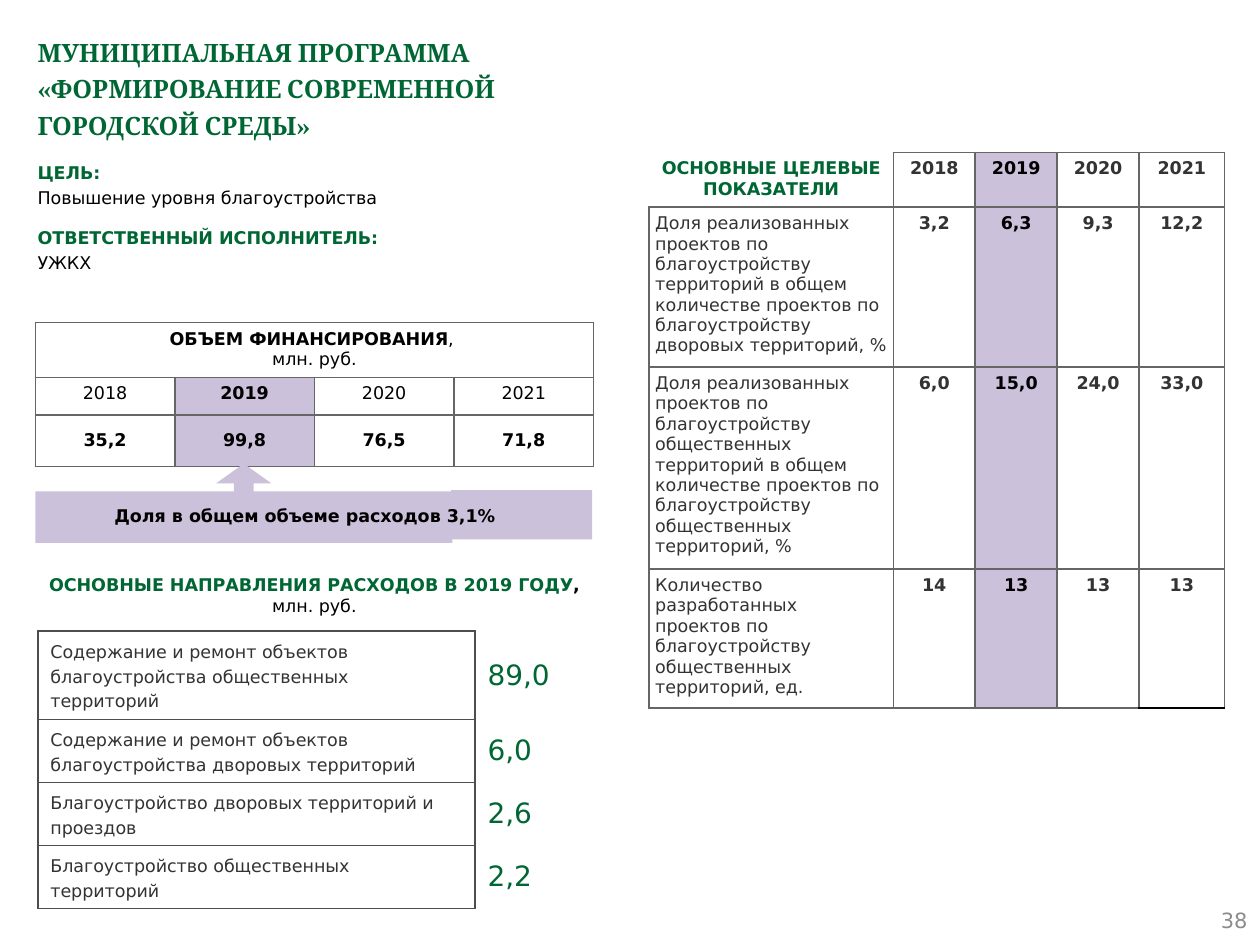
from dataclasses import dataclass

from lxml.etree import SubElement
from pptx import Presentation
from pptx.dml.color import RGBColor
from pptx.enum.shapes import MSO_SHAPE
from pptx.enum.text import MSO_ANCHOR, PP_ALIGN
from pptx.oxml.ns import qn
from pptx.util import Inches, Pt


@dataclass(frozen=True)
class Theme:
    green: str = "006633"
    black: str = "000000"
    dark: str = "333333"
    grid: str = "666666"
    frame: str = "4D4D4D"
    lilac: str = "CCC1DA"
    grey: str = "8C8C8C"
    heading_font: str = "Cambria"
    body_font: str = "DejaVu Sans"
    title: float = 14.4
    body: float = 10
    number: float = 12
    amount: float = 16


THEME = Theme()

TITLE = "МУНИЦИПАЛЬНАЯ ПРОГРАММА \v«ФОРМИРОВАНИЕ СОВРЕМЕННОЙ\vГОРОДСКОЙ СРЕДЫ»"
PASSPORT = [
    ("ЦЕЛЬ:", "Повышение уровня благоустройства"),
    ("ОТВЕТСТВЕННЫЙ ИСПОЛНИТЕЛЬ:", "УЖКХ"),
]
YEARS = ["2018", "2019", "2020", "2021"]
CURRENT = YEARS.index("2019")
FUNDING_TITLE = "ОБЪЕМ ФИНАНСИРОВАНИЯ"
UNIT = "млн. руб."
FUNDING = ["35,2", "99,8", "76,5", "71,8"]
SHARE = "Доля в общем объеме расходов 3,1%"
DIRECTIONS_TITLE = "ОСНОВНЫЕ НАПРАВЛЕНИЯ РАСХОДОВ В 2019 ГОДУ"
DIRECTIONS = [
    ("Содержание и ремонт объектов благоустройства общественных территорий", "89,0"),
    ("Содержание и ремонт объектов благоустройства дворовых территорий", "6,0"),
    ("Благоустройство дворовых территорий и проездов", "2,6"),
    ("Благоустройство общественных территорий", "2,2"),
]
INDICATORS_TITLE = "ОСНОВНЫЕ ЦЕЛЕВЫЕ ПОКАЗАТЕЛИ"
INDICATORS = [
    ("Доля реализованных проектов по благоустройству территорий в общем количестве "
     "проектов по благоустройству дворовых территорий, %",
     ["3,2", "6,3", "9,3", "12,2"]),
    ("Доля реализованных проектов по благоустройству общественных территорий в общем "
     "количестве проектов по благоустройству общественных территорий, %",
     ["6,0", "15,0", "24,0", "33,0"]),
    ("Количество разработанных проектов по благоустройству общественных территорий, ед.",
     ["14", "13", "13", "13"]),
]
PAGE_NUMBER = "38"


def write(paragraph, text, size=THEME.body, color=THEME.black, bold=False,
          font=THEME.body_font, align=PP_ALIGN.LEFT, spacing=None, before=None):
    """Append formatted text to the paragraph; \\v breaks the line."""
    paragraph.alignment = align
    if spacing:
        paragraph.line_spacing = spacing
    if before:
        paragraph.space_before = Pt(before)
    for index, line in enumerate(text.split("\v")):
        if index:
            paragraph.add_line_break()
        span = paragraph.add_run()
        span.text = line
        span.font.name = font
        span.font.size = Pt(size)
        span.font.bold = bold
        span.font.color.rgb = RGBColor.from_string(color)


def add_text(page, left, top, width, height, wrap=True, anchor=MSO_ANCHOR.TOP):
    frame = page.shapes.add_textbox(*map(Inches, (left, top, width, height))).text_frame
    frame.word_wrap = wrap
    frame.vertical_anchor = anchor
    return frame


def add_block(page, kind, left, top, width, height, fill=None, adjustments=()):
    block = page.shapes.add_shape(kind, *map(Inches, (left, top, width, height)))
    block.shadow.inherit = False
    block.line.fill.background()
    if fill:
        block.fill.solid()
        block.fill.fore_color.rgb = RGBColor.from_string(fill)
    else:
        block.fill.background()
    for index, value in enumerate(adjustments):
        block.adjustments[index] = value
    return block


def add_grid(page, left, top, widths, heights):
    shape = page.shapes.add_table(len(heights), len(widths), Inches(left), Inches(top),
                                  Inches(sum(widths)), Inches(sum(heights)))
    table = shape.table
    table.first_row = table.horz_banding = False
    for column, width in zip(table.columns, widths):
        column.width = Inches(width)
    for row, height in zip(table.rows, heights):
        row.height = Inches(height)
    return table


def style_cell(cell, border, sides="LRTB", fill=None, margin=None,
               anchor=MSO_ANCHOR.TOP, special=None):
    """Draw the borders named in sides; special maps a side to its own colour."""
    properties = cell._tc.get_or_add_tcPr()
    for side in "LRTB":
        line = SubElement(properties, qn(f"a:ln{side}"), w=str(Pt(1)))
        if side in sides:
            color = (special or {}).get(side, border)
            SubElement(SubElement(line, qn("a:solidFill")), qn("a:srgbClr"), val=color)
        else:
            SubElement(line, qn("a:noFill"))
    if fill:
        cell.fill.solid()
        cell.fill.fore_color.rgb = RGBColor.from_string(fill)
    else:
        cell.fill.background()
    cell.vertical_anchor = anchor
    if margin is not None:
        cell.margin_left = cell.margin_right = Inches(margin)
        cell.margin_top = cell.margin_bottom = Inches(margin)
    return cell.text_frame.paragraphs[0]


def add_funding(page):
    table = add_grid(page, 0.28, 2.56, [4.43 / len(YEARS)] * len(YEARS), [0.43, 0.3, 0.41])
    for cell in table.rows[0].cells:
        style_cell(cell, THEME.grid, margin=0.05)
    header = table.cell(0, 0)
    header.merge(table.cell(0, len(YEARS) - 1))
    first = header.text_frame.paragraphs[0]
    write(first, FUNDING_TITLE, bold=True, align=PP_ALIGN.CENTER)
    write(first, ", ", align=PP_ALIGN.CENTER)
    write(header.text_frame.add_paragraph(), UNIT, align=PP_ALIGN.CENTER)
    for row, values in enumerate([YEARS, FUNDING], start=1):
        for column, value in enumerate(values):
            current = column == CURRENT
            paragraph = style_cell(
                table.cell(row, column), THEME.grid, margin=0.05,
                fill=THEME.lilac if current else None,
                anchor=MSO_ANCHOR.MIDDLE if values is FUNDING else MSO_ANCHOR.TOP)
            write(paragraph, value, bold=current or values is FUNDING,
                  align=PP_ALIGN.CENTER)


def add_directions(page):
    table = add_grid(page, 0.3, 5.01, [3.47, 1.78], [0.5] * len(DIRECTIONS))
    for row, (name, amount) in enumerate(DIRECTIONS):
        paragraph = style_cell(table.cell(row, 0), THEME.frame, anchor=MSO_ANCHOR.MIDDLE)
        write(paragraph, name, color=THEME.dark, spacing=1.2)
        paragraph = style_cell(table.cell(row, 1), THEME.frame, "L", anchor=MSO_ANCHOR.MIDDLE)
        write(paragraph, amount, size=THEME.amount, color=THEME.green)


def add_indicators(page):
    table = add_grid(page, 5.15, 1.21, [1.94, 0.65, 0.65, 0.65, 0.68], [0.43, 1.27, 1.6, 1.1])
    rows = [(INDICATORS_TITLE, YEARS)] + INDICATORS
    for row, (name, values) in enumerate(rows):
        heading = row == 0
        paragraph = style_cell(table.cell(row, 0), THEME.grid,
                               "RB" if heading else "LRTB", margin=0.05)
        write(paragraph, name, bold=heading, color=THEME.green if heading else THEME.dark,
              align=PP_ALIGN.CENTER if heading else PP_ALIGN.LEFT)
        for column, value in enumerate(values):
            current = column == CURRENT
            corner = row == len(rows) - 1 and column == len(values) - 1
            paragraph = style_cell(table.cell(row, column + 1), THEME.grid, margin=0.05,
                                   fill=THEME.lilac if current else None,
                                   special={"B": THEME.black} if corner else None)
            write(paragraph, value, bold=True, align=PP_ALIGN.CENTER,
                  color=THEME.black if current else THEME.dark)


def main():
    deck = Presentation()
    deck.slide_width, deck.slide_height = Inches(10), Inches(7.5)
    page = deck.slides.add_slide(deck.slide_layouts[6])

    write(add_text(page, 0.2, 0.2, 9.61, 0.79).paragraphs[0], TITLE, size=THEME.title,
          color=THEME.green, bold=True, font=THEME.heading_font, spacing=1.2)
    number = add_text(page, 7.67, 7.1, 2.33, 0.4, anchor=MSO_ANCHOR.MIDDLE)
    write(number.paragraphs[0], PAGE_NUMBER, size=THEME.number, color=THEME.grey,
          align=PP_ALIGN.RIGHT)

    passport = add_text(page, 0.2, 1.2, 4.5, 1.03)
    for index, (label, value) in enumerate(PASSPORT):
        paragraph = passport.add_paragraph() if index else passport.paragraphs[0]
        write(paragraph, label, color=THEME.green, bold=True, spacing=1.2,
              before=8.5 if index else None)
        write(passport.add_paragraph(), value, spacing=1.2)

    add_funding(page)
    heading = add_block(page, MSO_SHAPE.PENTAGON, 0.28, 4.51, 4.43, 0.43, adjustments=[0])
    heading.text_frame.vertical_anchor = MSO_ANCHOR.MIDDLE
    paragraph = heading.text_frame.paragraphs[0]
    write(paragraph, DIRECTIONS_TITLE, color=THEME.green, bold=True, align=PP_ALIGN.CENTER)
    write(paragraph, ", ", bold=True, align=PP_ALIGN.CENTER)
    write(paragraph, UNIT, align=PP_ALIGN.CENTER)
    add_block(page, MSO_SHAPE.UP_ARROW_CALLOUT, 0.28, 3.68, 3.31, 0.63, THEME.lilac,
              [0.25, 0.35, 0.25, 0.65])
    add_directions(page)
    add_block(page, MSO_SHAPE.RECTANGLE, 3.58, 3.89, 1.12, 0.39, THEME.lilac)
    write(add_text(page, 0.81, 3.96, 3.27, 0.27, wrap=False).paragraphs[0], SHARE, bold=True)
    add_indicators(page)
    deck.save("out.pptx")


if __name__ == "__main__":
    main()
